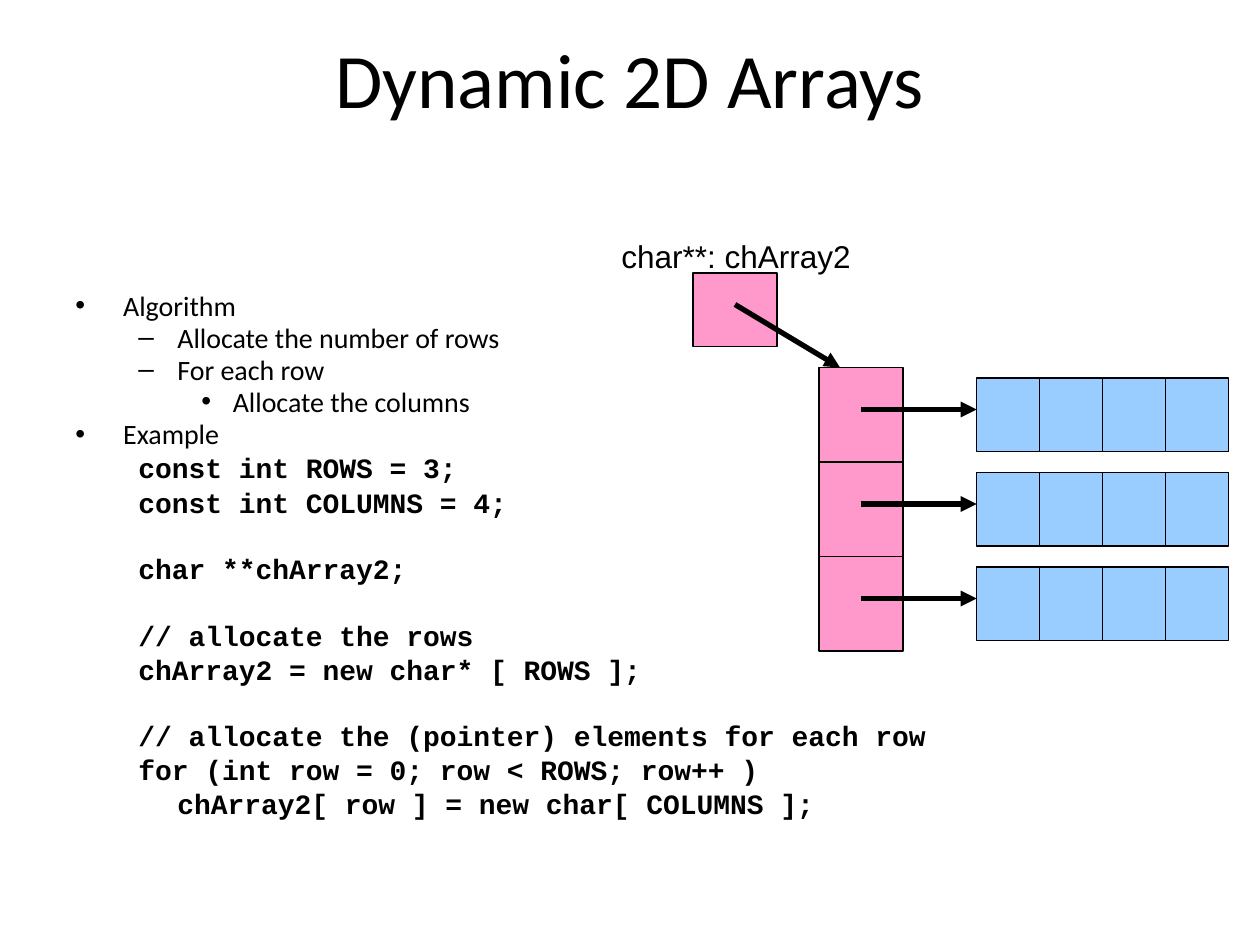
from pptx import Presentation
from pptx.dml.color import RGBColor
from pptx.enum.shapes import MSO_CONNECTOR, MSO_SHAPE
from pptx.enum.text import MSO_ANCHOR, PP_ALIGN
from pptx.oxml.ns import qn
from pptx.util import Inches, Pt
from lxml.etree import SubElement

BLACK = RGBColor(0x00, 0x00, 0x00)
PINK = RGBColor(0xFF, 0x99, 0xCC)
BLUE = RGBColor(0x99, 0xCC, 0xFF)

deck = Presentation()
deck.slide_width, deck.slide_height = Inches(10), Inches(7.5)
page = deck.slides.add_slide(deck.slide_layouts[6])

# The page is a grid of 120 columns by 90 rows
UNIT = deck.slide_width / 120


def grid(*cells):
    return [round(cell * UNIT) for cell in cells]


def add_text(para, text, size, font, bold=False):
    span = para.add_run()
    span.text = text
    span.font.size, span.font.name, span.font.bold = Pt(size), font, bold
    span.font.color.rgb = BLACK


# Title
title = page.shapes.add_textbox(*grid(6, 2.75, 108, 9.25)).text_frame
title.word_wrap = True
title.vertical_anchor = MSO_ANCHOR.MIDDLE
title.paragraphs[0].alignment = PP_ALIGN.CENTER
add_text(title.paragraphs[0], "Dynamic 2D Arrays", 44, "Calibri")

# Outline and code: text, bullet, left margin, hanging indent, blank line before
LINES = [
    ("Algorithm", "•", 0.38, 0.38, False),
    ("Allocate the number of rows", "–", 0.81, 0.31, False),
    ("For each row", "–", 0.81, 0.31, False),
    ("Allocate the columns", "•", 1.25, 0.25, False),
    ("Example", "•", 0.38, 0.38, False),
    ("const int ROWS = 3;", None, 0.81, 0.31, False),
    ("const int COLUMNS = 4;", None, 0.81, 0.31, False),
    ("char **chArray2;", None, 0.81, 0.31, True),
    ("// allocate the rows", None, 0.81, 0.31, True),
    ("chArray2 = new char* [ ROWS ];", None, 0.81, 0.31, False),
    ("// allocate the (pointer) elements for each row", None, 0.81, 0.31, True),
    ("for (int row = 0; row < ROWS; row++ )", None, 0.81, 0.31, False),
    ("chArray2[ row ] = new char[ COLUMNS ];", None, 0.81, 0, False),
]
PITCH = 18.6
body = page.shapes.add_textbox(*grid(6, 27.5, 108, 53)).text_frame
body.word_wrap = True
for number, (text, bullet, margin, hanging, gap) in enumerate(LINES):
    para = body.add_paragraph() if number else body.paragraphs[0]
    para.line_spacing = 0.8
    space = 3 if bullet else 4.1
    para.space_before = Pt(space + PITCH * gap if number else 0)
    props = para._p.get_or_add_pPr()
    props.set("marL", str(Inches(margin)))
    props.set("indent", str(-Inches(hanging)))
    if bullet:
        SubElement(props, qn("a:buFont")).set("typeface", "Arial")
        SubElement(props, qn("a:buChar")).set("char", bullet)
        add_text(para, text, 16, "Calibri")
    else:
        SubElement(props, qn("a:buNone"))
        add_text(para, text, 16, "Courier New", bold=True)

# Memory cells: the pointer, the row pointers, the columns of each row
ROWS, COLUMNS = 3, 4
cells = [(66, 26, 8, 7, PINK)]
cells += [(78, 35 + 9 * row, 8, 9, PINK) for row in range(ROWS)]
cells += [(93 + 6 * column, 36 + 9 * row, 6, 7, BLUE)
          for row in range(ROWS) for column in range(COLUMNS)]
for left, top, width, height, color in cells:
    box = page.shapes.add_shape(MSO_SHAPE.RECTANGLE, *grid(left, top, width, height))
    box.shadow.inherit = False
    box.fill.solid()
    box.fill.fore_color.rgb = color
    box.line.color.rgb = BLACK
    box.line.width = Pt(0.75)

# Label of the pointer
label = page.shapes.add_textbox(*grid(58, 22, 26, 4.8)).text_frame
label.word_wrap = True
add_text(label.paragraphs[0], "char**: chArray2", 18, "Arial")

# Arrows from each pointer to what it points at
arrows = [(70, 29, 80, 35)]
arrows += [(82, 39 + 9 * row, 93, 39 + 9 * row) for row in range(ROWS)]
for ends in arrows:
    arrow = page.shapes.add_connector(MSO_CONNECTOR.STRAIGHT, *grid(*ends))
    arrow.line.color.rgb = BLACK
    arrow.line.width = Pt(3)
    SubElement(arrow.line._get_or_add_ln(), qn("a:tailEnd")).set("type", "triangle")
    SubElement(arrow._element.spPr, qn("a:effectLst"))

deck.save("out.pptx")
